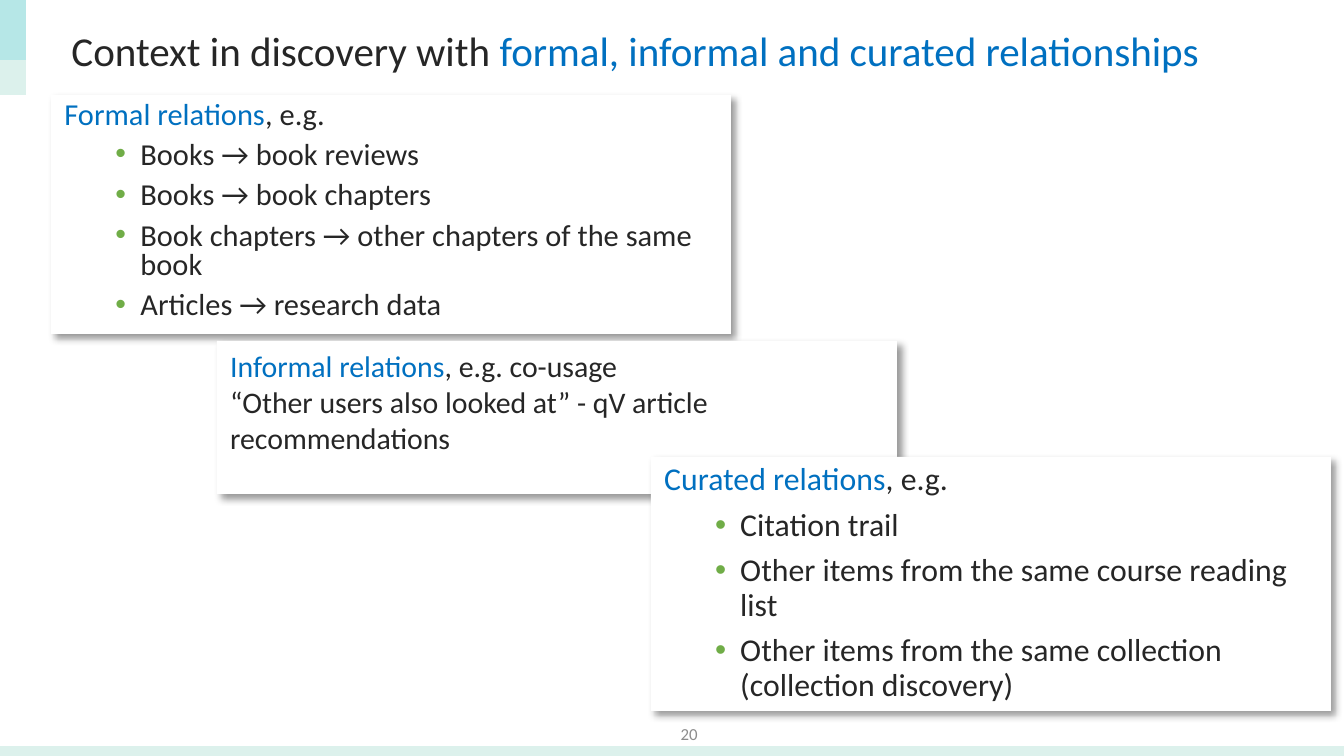
from lxml.etree import SubElement
from pptx import Presentation
from pptx.dml.color import RGBColor
from pptx.enum.shapes import MSO_SHAPE
from pptx.enum.text import MSO_ANCHOR, MSO_AUTO_SIZE, PP_ALIGN
from pptx.oxml.ns import qn
from pptx.util import Pt

PX = 914400 / 134.4
COLORS = {"ink": "262626", "accent": "0070C0", "bullet": "70AD47", "white": "FFFFFF",
          "mint": "DCF1EC", "aqua": "50CFDA", "number": "8C8C8C", "shadow": "000000"}
FONT = "Calibri"

BARS = [
    ((0, 746, 1344, 10), "mint", None),
    ((0, 0, 26, 95), "mint", None),
    ((0, 0, 26, 60), "aqua", 27),
]
TITLE = [("Context in discovery with ", "ink"),
         ("formal, informal and curated relationships", "accent")]
PAGE_NUMBER = "20"
CARD_WIDTH = 680
CARDS = [
    {"at": (51, 95), "height": 239, "size": 16.3, "spacing": 0.8,
     "lead": "Formal relations", "rest": [", e.g."],
     "bullets": ["Books → book reviews", "Books → book chapters",
                 "Book chapters → other chapters of the same book",
                 "Articles → research data"]},
    {"at": (217, 341), "height": 153, "size": 16, "spacing": 1.0,
     "lead": "Informal relations",
     "rest": [", e.g. co-usage ",
              "“Other users also looked at” - qV article recommendations"],
     "bullets": []},
    {"at": (651, 457), "height": 254, "size": 17, "spacing": 0.9,
     "lead": "Curated relations", "rest": [", e.g."],
     "bullets": ["Citation trail", "Other items from the same course reading list",
                 "Other items from the same collection (collection discovery)"]},
]


def px(value):
    return round(value * PX)


def apply(target, values):
    for name, value in values.items():
        setattr(target, name, value)


def place(shape, left, top, width, height):
    apply(shape, {"left": px(left), "top": px(top),
                  "width": px(width), "height": px(height)})


def paint(shape, color):
    shape.fill.solid()
    shape.fill.fore_color.rgb = RGBColor.from_string(COLORS[color])
    shape.line.fill.background()
    shape.shadow.inherit = False


def add_run(paragraph, text, size, color):
    run = paragraph.add_run()
    run.text = text
    apply(run.font, {"name": FONT, "size": Pt(size)})
    run.font.color.rgb = RGBColor.from_string(COLORS[color])


def format_frame(frame, anchor):
    apply(frame, {"word_wrap": True, "auto_size": MSO_AUTO_SIZE.NONE,
                  "vertical_anchor": anchor})


def add_shadow(shape):
    effects = shape._element.spPr.find(qn("a:effectLst"))
    shadow = SubElement(effects, qn("a:outerShdw"), blurRad=str(Pt(4)), dist=str(Pt(3)),
                        dir=str(45 * 60000), algn="tl", rotWithShape="0")
    color = SubElement(shadow, qn("a:srgbClr"), val=COLORS["shadow"])
    SubElement(color, qn("a:alpha"), val="40000")


def set_bullet(paragraph, bulleted):
    properties = paragraph._p.get_or_add_pPr()
    if bulleted:
        properties.set("marL", str(px(76)))
        properties.set("indent", str(px(-25)))
        color = SubElement(properties, qn("a:buClr"))
        SubElement(color, qn("a:srgbClr"), val=COLORS["bullet"])
        SubElement(properties, qn("a:buFont"), typeface="Arial")
        SubElement(properties, qn("a:buChar"), char="•")
    else:
        properties.set("marL", "0")
        properties.set("indent", "0")
        SubElement(properties, qn("a:buNone"))


def fill_card(shape, card):
    place(shape, *card["at"], CARD_WIDTH, card["height"])
    paint(shape, "white")
    add_shadow(shape)
    frame = shape.text_frame
    format_frame(frame, MSO_ANCHOR.TOP)
    layout = {"alignment": PP_ALIGN.LEFT, "line_spacing": card["spacing"]}

    heading = frame.paragraphs[0]
    set_bullet(heading, False)
    apply(heading, {**layout, "space_before": Pt(0)})
    add_run(heading, card["lead"], card["size"], "accent")
    for index, line in enumerate(card["rest"]):
        if index:
            heading.add_line_break()
        add_run(heading, line, card["size"], "ink")

    for text in card["bullets"]:
        paragraph = frame.add_paragraph()
        set_bullet(paragraph, True)
        apply(paragraph, {**layout, "level": 1, "space_before": Pt(6)})
        add_run(paragraph, text, card["size"], "ink")


def main():
    presentation = Presentation()
    apply(presentation, {"slide_width": px(1344), "slide_height": px(756)})
    slide = presentation.slides.add_slide(presentation.slide_layouts[1])
    shapes = slide.shapes
    title, body = shapes.title, slide.placeholders[1]

    for box, color, alpha in BARS:
        bar = shapes.add_shape(MSO_SHAPE.RECTANGLE, *map(px, box))
        paint(bar, color)
        if alpha:
            fill_color = bar._element.spPr.find(qn("a:solidFill"))[0]
            SubElement(fill_color, qn("a:alpha"), val=str(alpha * 1000))

    number = shapes.add_textbox(*map(px, (632, 707, 79, 54)))
    format_frame(number.text_frame, MSO_ANCHOR.MIDDLE)
    paragraph = number.text_frame.paragraphs[0]
    paragraph.alignment = PP_ALIGN.RIGHT
    add_run(paragraph, PAGE_NUMBER, 9, "number")

    place(title, 58, 11, 1270, 84)
    format_frame(title.text_frame, MSO_ANCHOR.MIDDLE)
    paragraph = title.text_frame.paragraphs[0]
    apply(paragraph, {"alignment": PP_ALIGN.LEFT, "line_spacing": 0.9,
                      "space_before": Pt(0)})
    for text, color in TITLE:
        add_run(paragraph, text, 22, color)

    for index, card in enumerate(CARDS):
        shape = body
        if index:
            shape = shapes.add_shape(MSO_SHAPE.RECTANGLE, 0, 0, px(CARD_WIDTH), px(100))
        fill_card(shape, card)

    presentation.save("out.pptx")


if __name__ == "__main__":
    main()
